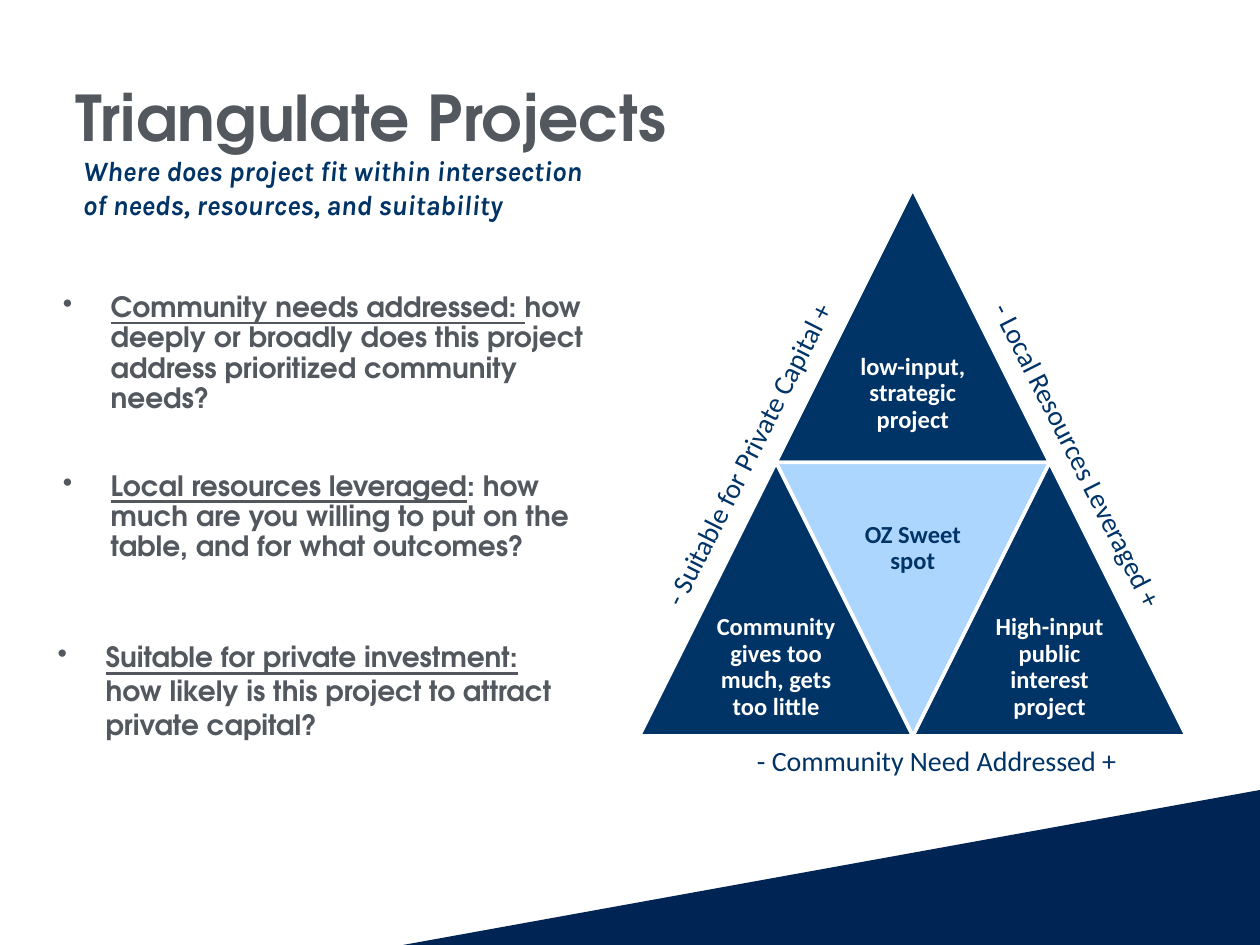
from lxml import etree
from pptx import Presentation
from pptx.dml.color import RGBColor
from pptx.enum.shapes import MSO_SHAPE as SHAPE
from pptx.enum.text import MSO_ANCHOR as ANCHOR, PP_ALIGN as ALIGN
from pptx.oxml.ns import qn
from pptx.util import Inches, Pt

NAVY, DEEP, SKY, GREY, WHITE = "003366", "002453", "ADD6FF", "53585F", "FFFFFF"
HEAD, SUB, LABEL = "TeX Gyre Adventor", "Karla", "Calibri"


def rgb(value):
    return RGBColor.from_string(value)


class Deck:
    def __init__(self):
        self.prs = Presentation()
        self.prs.slide_width, self.prs.slide_height = Inches(10), Inches(7.5)
        self.s = self.prs.slides.add_slide(self.prs.slide_layouts[5])

    def run(self, p, text, font, size, color, bold=False, italic=False, underline=False):
        r = p.add_run()
        r.text = text
        f = r.font
        f.name, f.size, f.color.rgb = font, Pt(size), rgb(color)
        f.bold, f.italic, f.underline = bold, italic, underline

    def title(self, text, x, y, w, h):
        sp = self.s.shapes.title
        sp.left, sp.top, sp.width, sp.height = map(Inches, (x, y, w, h))
        sp.text_frame.vertical_anchor = ANCHOR.MIDDLE
        p = sp.text_frame.paragraphs[0]
        p.alignment = ALIGN.LEFT
        self.run(p, text, HEAD, 36, GREY, bold=True)

    def box(self, x, y, w, h, anchor=ANCHOR.TOP):
        sp = self.s.shapes.add_textbox(*map(Inches, (x, y, w, h)))
        tf = sp.text_frame
        tf.word_wrap, tf.vertical_anchor = True, anchor
        return sp, tf

    def subtitle(self, text, x, y, w, h):
        _, tf = self.box(x, y, w, h, ANCHOR.MIDDLE)
        self.run(tf.paragraphs[0], text, SUB, 16, NAVY, bold=True, italic=True)

    def bullets(self, items, x, y, w, h, spacing=1.0, gap=0):
        _, tf = self.box(x, y, w, h)
        for i, (lead, rest) in enumerate(items):
            p = tf.add_paragraph() if i else tf.paragraphs[0]
            pPr = p._p.get_or_add_pPr()
            pPr.set("marL", str(Inches(0.38)))
            pPr.set("indent", str(-Inches(0.38)))
            etree.SubElement(pPr, qn("a:buChar")).set("char", "•")
            p.line_spacing = spacing
            if i:
                p.space_before = Pt(gap)
            self.run(p, lead, HEAD, 16, GREY, bold=True, underline=True)
            self.run(p, rest, HEAD, 16, GREY, bold=True)

    def shape(self, kind, x, y, w, h, fill, line=None, rotation=0):
        sp = self.s.shapes.add_shape(kind, *map(Inches, (x, y, w, h)))
        sp.shadow.inherit = False
        sp.fill.solid()
        sp.fill.fore_color.rgb = rgb(fill)
        if line:
            sp.line.color.rgb, sp.line.width = rgb(line), Pt(2)
        else:
            sp.line.fill.background()
        sp.rotation = rotation
        return sp

    def caption(self, text, x, y, size, color):
        _, tf = self.box(x, y, size, size, ANCHOR.MIDDLE)
        tf.margin_left = tf.margin_right = tf.margin_top = tf.margin_bottom = Inches(0.06)
        p = tf.paragraphs[0]
        p.alignment, p.line_spacing = ALIGN.CENTER, 0.9
        self.run(p, text, LABEL, 14, color, bold=True)

    def side_label(self, text, cx, cy, rotation=0):
        w, h = 3.2, 0.37
        sp, tf = self.box(cx - w / 2, cy - h / 2, w, h)
        sp.rotation = rotation
        self.run(tf.paragraphs[0], text, LABEL, 16, NAVY)


def main():
    deck = Deck()

    # Corner wedge
    wedge = deck.shape(SHAPE.RIGHT_TRIANGLE, 3.2, 6.27, 6.8, 1.23, DEEP)
    wedge._element.spPr.get_or_add_xfrm().set("flipH", "1")

    # Headings
    deck.title("Triangulate Projects", 0.5, 0.3, 9, 1.25)
    deck.subtitle("Where does project fit within intersection of needs, "
                  "resources, and suitability", 0.56, 0.86, 4.29, 1.25)

    # Criteria
    deck.bullets([
        ("Community needs addressed: ", "how deeply or broadly does this project "
         "address prioritized community needs?"),
        ("Local resources leveraged", ": how much are you willing to put on the "
         "table, and for what outcomes?"),
    ], 0.4, 2.28, 4.52, 2.32, spacing=0.9, gap=33)
    deck.bullets([
        ("Suitable for private investment: ",
         "how likely is this project to attract private capital?"),
    ], 0.36, 5.03, 4.25, 1.2)

    # Triangle of triangles: side length, half side, apex corner
    side, left, top = 2.17, 6.16, 1.5
    half = side / 2
    mid = top + side
    for x, y, text in [
        (left, top, "low-input, strategic project"),
        (left - half, mid, "Community gives too much, gets too little"),
        (left + half, mid, "High-input public interest project"),
    ]:
        deck.shape(SHAPE.ISOSCELES_TRIANGLE, x, y, side, side, NAVY, WHITE)
        deck.caption(text, x + half / 2, y + half, half, WHITE)
    deck.shape(SHAPE.ISOSCELES_TRIANGLE, left, mid, side, side, SKY, WHITE, rotation=180)
    deck.caption("OZ Sweet spot", left + half / 2, mid + 0.14, half, NAVY)

    # Labels along the sides
    deck.side_label("- Community Need Addressed +", 7.51, 6.04)
    deck.side_label("- Local Resources Leveraged +", 8.63, 3.76, 63.1)
    deck.side_label("- Suitable for Private Capital +", 6.01, 3.45, 296.7)

    deck.prs.save("out.pptx")


if __name__ == "__main__":
    main()
